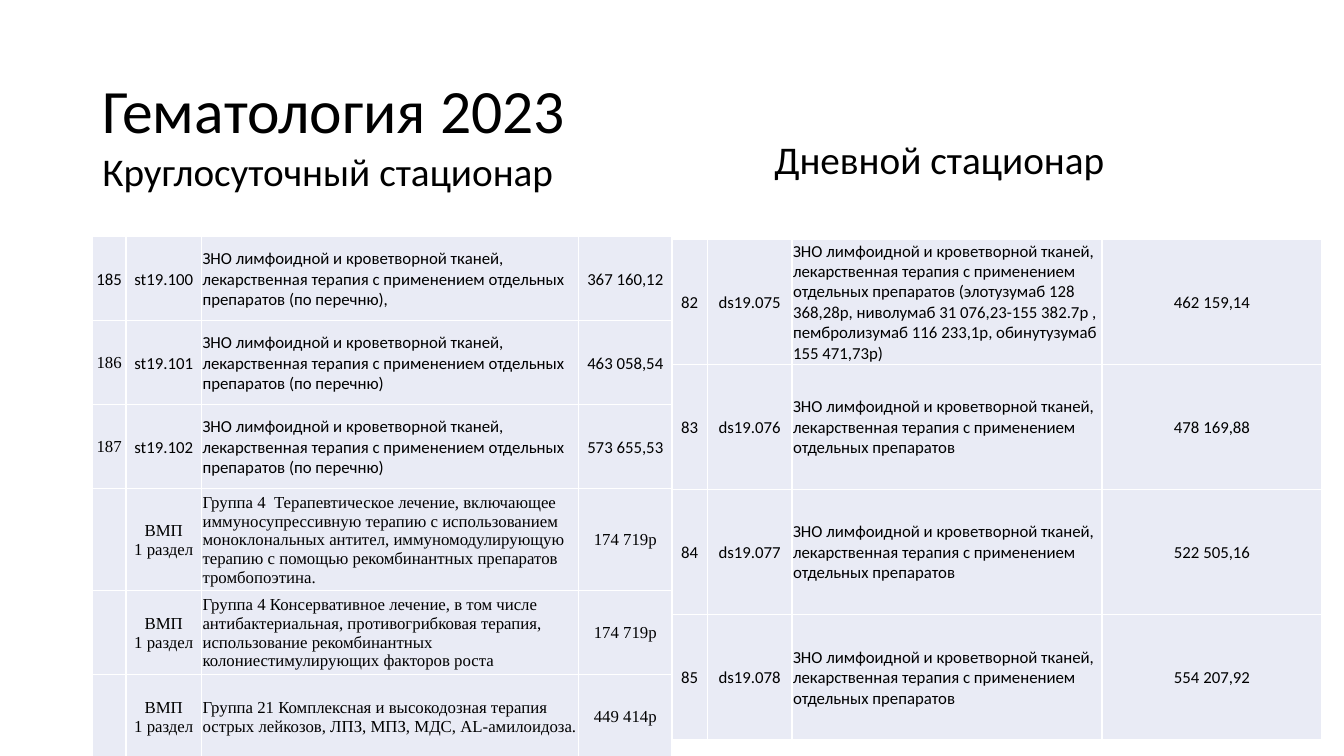
from dataclasses import dataclass

from lxml import etree
from pptx import Presentation
from pptx.dml.color import RGBColor
from pptx.enum.text import MSO_ANCHOR, PP_ALIGN
from pptx.oxml.ns import qn
from pptx.slide import Slide
from pptx.table import _Cell
from pptx.text.text import _Paragraph
from pptx.util import Emu, Inches, Pt

LEFT, CENTER = PP_ALIGN.LEFT, PP_ALIGN.CENTER
TOP, MIDDLE = MSO_ANCHOR.TOP, MSO_ANCHOR.MIDDLE
COLS, ROWS = 160, 90
WIDE, HIGH = Inches(13.33), Inches(7.5)


@dataclass(frozen=True)
class Theme:
    ink: str = "000000"
    fill: str = "E9EBF5"
    rule: str = "FFFFFF"
    sans: str = "Calibri"
    serif: str = "Times New Roman"
    title: int = 44
    head: int = 28
    cell: int = 12


@dataclass(frozen=True)
class Label:
    text: str
    x: float
    y: float
    w: float
    h: float
    size: int
    anchor: MSO_ANCHOR
    before: int


@dataclass(frozen=True)
class Row:
    texts: tuple[str, str, str, str]
    serif: tuple[int, ...] = ()


@dataclass(frozen=True)
class Grid:
    x: float
    y: float
    widths: tuple[float, ...]
    step: float
    rows: tuple[Row, ...]


THEME = Theme()
ALL = (0, 1, 2, 3)
DRUG = "ЗНО лимфоидной и кроветворной тканей, лекарственная терапия с применением отдельных препаратов"
LIST = f"{DRUG} (по перечню)"
PRICES = (
    "(элотузумаб 128 368,28р, ниволумаб 31 076,23-155 382.7р , "
    "пембролизумаб 116 233,1р, обинутузумаб 155 471,73р)"
)
QUOTA = "ВМП\n1 раздел"
IMMUNE = (
    "Группа 4  Терапевтическое лечение, включающее иммуносупрессивную терапию "
    "с использованием моноклональных антител, иммуномодулирующую терапию "
    "с помощью рекомбинантных препаратов тромбопоэтина."
)
CARE = (
    "Группа 4 Консервативное лечение, в том числе антибактериальная, "
    "противогрибковая терапия, использование рекомбинантных "
    "колониестимулирующих факторов роста"
)
DOSE = "Группа 21 Комплексная и высокодозная терапия острых лейкозов, ЛПЗ, МПЗ, МДС, AL-амилоидоза."

LABELS = (
    Label("Гематология 2023", 11, 4.8, 138, 17.4, THEME.title, MIDDLE, 0),
    Label("Круглосуточный стационар", 11, 17.6, 138, 63.5, THEME.head, TOP, 10),
    Label("Дневной стационар", 91, 16.2, 69, 64.9, THEME.head, TOP, 10),
)
DAY = Grid(80, 28.5, (4.2, 10.1, 36.9, 26.2), 14.9, (
    Row(("82", "ds19.075", f"{DRUG} {PRICES}", "462 159,14")),
    Row(("83", "ds19.076", DRUG, "478 169,88")),
    Row(("84", "ds19.077", DRUG, "522 505,16")),
    Row(("85", "ds19.078", DRUG, "554 207,92")),
))
WARD = Grid(11, 28.2, (4, 9, 44.9, 11.1), 10, (
    Row(("185", "st19.100", f"{LIST},", "367 160,12")),
    Row(("186", "st19.101", LIST, "463 058,54"), (0,)),
    Row(("187", "st19.102", LIST, "573 655,53"), (0,)),
    Row(("", QUOTA, IMMUNE, "174 719р"), ALL),
    Row(("", QUOTA, CARE, "174 719р"), ALL),
    Row(("", QUOTA, DOSE, "449 414р"), ALL),
))


def across(n: float) -> Emu:
    return Emu(round(WIDE * n / COLS))


def down(n: float) -> Emu:
    return Emu(round(HIGH * n / ROWS))


def style(para: _Paragraph, face: str, size: int, align: PP_ALIGN) -> None:
    para.alignment = align
    para.font.name = face
    para.font.size = Pt(size)
    para.font.color.rgb = RGBColor.from_string(THEME.ink)


def write(slide: Slide, label: Label) -> None:
    box = slide.shapes.add_textbox(
        across(label.x), down(label.y), across(label.w), down(label.h)
    )
    frame = box.text_frame
    frame.word_wrap = True
    frame.vertical_anchor = label.anchor
    frame.text = label.text
    para = frame.paragraphs[0]
    style(para, THEME.sans, label.size, LEFT)
    para.line_spacing = 0.9
    para.space_before = Pt(label.before)


def edge(cell: _Cell) -> None:
    props = cell._tc.get_or_add_tcPr()
    for side in ("L", "R", "T", "B"):
        line = etree.SubElement(props, qn(f"a:ln{side}"), w=str(Pt(1)))
        solid = etree.SubElement(line, qn("a:solidFill"))
        etree.SubElement(solid, qn("a:srgbClr"), val=THEME.rule)


def fill(cell: _Cell, text: str, face: str, align: PP_ALIGN) -> None:
    edge(cell)
    cell.fill.solid()
    cell.fill.fore_color.rgb = RGBColor.from_string(THEME.fill)
    cell.margin_left = cell.margin_right = cell.margin_top = Inches(0.01)
    cell.margin_bottom = 0
    cell.vertical_anchor = MIDDLE
    cell.text = text
    for para in cell.text_frame.paragraphs:
        style(para, face, THEME.cell, align)


def draw(slide: Slide, grid: Grid) -> None:
    frame = slide.shapes.add_table(
        len(grid.rows), len(grid.widths), across(grid.x), down(grid.y),
        across(sum(grid.widths)), down(grid.step * len(grid.rows)),
    )
    table = frame.table
    table.first_row = table.horz_banding = False
    for col, width in zip(table.columns, grid.widths):
        col.width = across(width)
    for r, row in enumerate(grid.rows):
        table.rows[r].height = down(grid.step)
        for c, text in enumerate(row.texts):
            face = THEME.serif if c in row.serif else THEME.sans
            fill(table.cell(r, c), text, face, LEFT if c == 2 else CENTER)


def main() -> None:
    deck = Presentation()
    deck.slide_width, deck.slide_height = WIDE, HIGH
    slide = deck.slides.add_slide(deck.slide_layouts[6])
    for label in LABELS:
        write(slide, label)
    for grid in (DAY, WARD):
        draw(slide, grid)
    deck.save("out.pptx")


if __name__ == "__main__":
    main()
